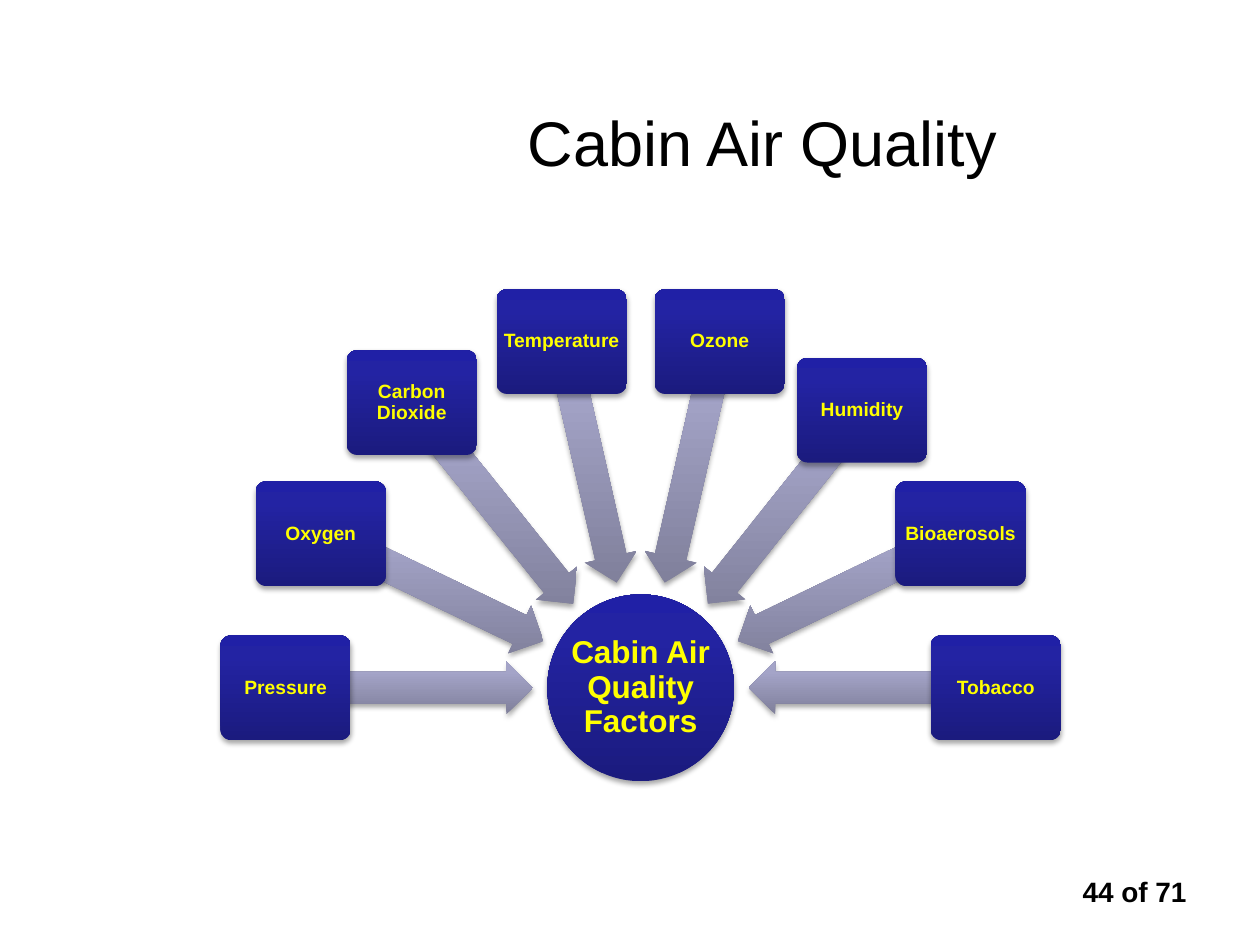
from math import atan2, cos, degrees, hypot, pi, sin

from lxml.etree import SubElement
from pptx import Presentation
from pptx.dml.color import RGBColor
from pptx.enum.shapes import MSO_SHAPE
from pptx.enum.text import MSO_ANCHOR, PP_ALIGN
from pptx.oxml.ns import qn
from pptx.util import Inches, Pt

WIDTH, HEIGHT = 10, 7.5
FONT = "Arial"
BLACK, YELLOW = "000000", "FFFF00"
NAVY = [(0, "1B1B7E"), (80, "2323A3"), (100, "2020A6")]
LILAC = [(0, "7F7F9A"), (80, "A4A4C8"), (100, "A5A5C9")]

FACTORS = ["Pressure", "Oxygen", "Carbon Dioxide", "Temperature",
           "Ozone", "Humidity", "Bioaerosols", "Tobacco"]
NUDGES = {"Carbon Dioxide": (-0.06, -0.06)}


def color(hex_string):
    return RGBColor.from_string(hex_string)


def share(left, top, width, height):
    """Turn shares of the slide's size into a box in inches."""
    return left * WIDTH, top * HEIGHT, width * WIDTH, height * HEIGHT


def centered(cx, cy, width, height):
    return cx - width / 2, cy - height / 2, width, height


def add_node(parent, tag, **attributes):
    return SubElement(parent, qn(tag), attributes)


def add_color(parent, hex_string):
    return add_node(parent, "a:srgbClr", val=hex_string)


def add_shaded(slide, kind, box, stops, rotation=0):
    """Add a shape with an upright gradient and a soft shadow below it."""
    s = slide.shapes.add_shape(kind, *map(Inches, box))
    s.rotation = rotation
    s.line.fill.background()
    s.fill.gradient()
    grad = s._element.spPr.find(qn("a:gradFill"))
    grad.clear()
    grad.set("rotWithShape", "0")
    stop_list = add_node(grad, "a:gsLst")
    for position, hex_string in stops:
        add_color(add_node(stop_list, "a:gs", pos=str(position * 1000)), hex_string)
    add_node(grad, "a:lin", ang="16200000", scaled="0")

    s.shadow.inherit = False
    effects = s._element.spPr.find(qn("a:effectLst"))
    shadow = add_node(effects, "a:outerShdw", blurRad=str(Pt(3.1)),
                      dist=str(Pt(1.8)), dir="5400000", rotWithShape="0")
    add_node(add_color(shadow, BLACK), "a:alpha", val="35000")
    return s


def add_text(slide, box, text, size, hex_string, bold=True, inset=None, spacing=0.9):
    sp = slide.shapes.add_textbox(*map(Inches, box))
    tf = sp.text_frame
    tf.word_wrap = True
    tf.vertical_anchor = MSO_ANCHOR.MIDDLE
    if inset is not None:
        tf.margin_left = tf.margin_right = Inches(inset)
        tf.margin_top = tf.margin_bottom = Inches(inset)
    tf.text = text
    p = tf.paragraphs[0]
    p.alignment = PP_ALIGN.CENTER
    p.line_spacing = spacing
    font = p.runs[0].font
    font.name, font.size, font.bold = FONT, Pt(size), bold
    font.color.rgb = color(hex_string)


def add_factor_fan(slide, box):
    """Place the factors on a half circle, each pointing at the hub."""
    left, top, width, height = box
    node_w, node_h = 0.155 * width, 0.213 * height
    hub = 0.38 * height
    radius = (width - node_w) / 2
    cx, cy = left + width / 2, top + height - hub / 2
    tip, thickness = 0.578 * hub, 0.284 * hub

    hub_box = centered(cx, cy, hub, hub)
    add_shaded(slide, MSO_SHAPE.OVAL, hub_box, NAVY)
    add_text(slide, hub_box, "Cabin Air Quality Factors", 18, YELLOW, inset=0.01)

    for i, factor in enumerate(FACTORS):
        angle = pi + pi * i / (len(FACTORS) - 1)
        nudge_x, nudge_y = NUDGES.get(factor, (0, 0))
        dx, dy = radius * cos(angle) + nudge_x, radius * sin(angle) + nudge_y
        distance = hypot(dx, dy)
        middle = (distance + tip) / 2 / distance

        arrow_box = centered(cx + dx * middle, cy + dy * middle,
                             distance - tip, thickness)
        arrow = add_shaded(slide, MSO_SHAPE.LEFT_ARROW, arrow_box, LILAC,
                           degrees(atan2(dy, dx)) % 360)
        arrow.adjustments[0] = 0.6
        arrow.adjustments[1] = 0.5

        node_box = centered(cx + dx, cy + dy, node_w, node_h)
        node = add_shaded(slide, MSO_SHAPE.ROUNDED_RECTANGLE, node_box, NAVY)
        node.adjustments[0] = 0.1
        add_text(slide, node_box, factor, 11, YELLOW, inset=0.02)


def main():
    prs = Presentation()
    prs.slide_width, prs.slide_height = Inches(WIDTH), Inches(HEIGHT)
    slide = prs.slides.add_slide(prs.slide_layouts[6])
    add_text(slide, share(0.26, 0.06, 0.69, 0.18), "Cabin Air Quality",
             36, BLACK, bold=False, spacing=1.0)
    add_factor_fan(slide, (1.75, 2.3, 6.67, 3.9))
    add_text(slide, (8.42, 6.92, 1.17, 0.34), "44 of 71", 16, BLACK)
    prs.save("out.pptx")


if __name__ == "__main__":
    main()
